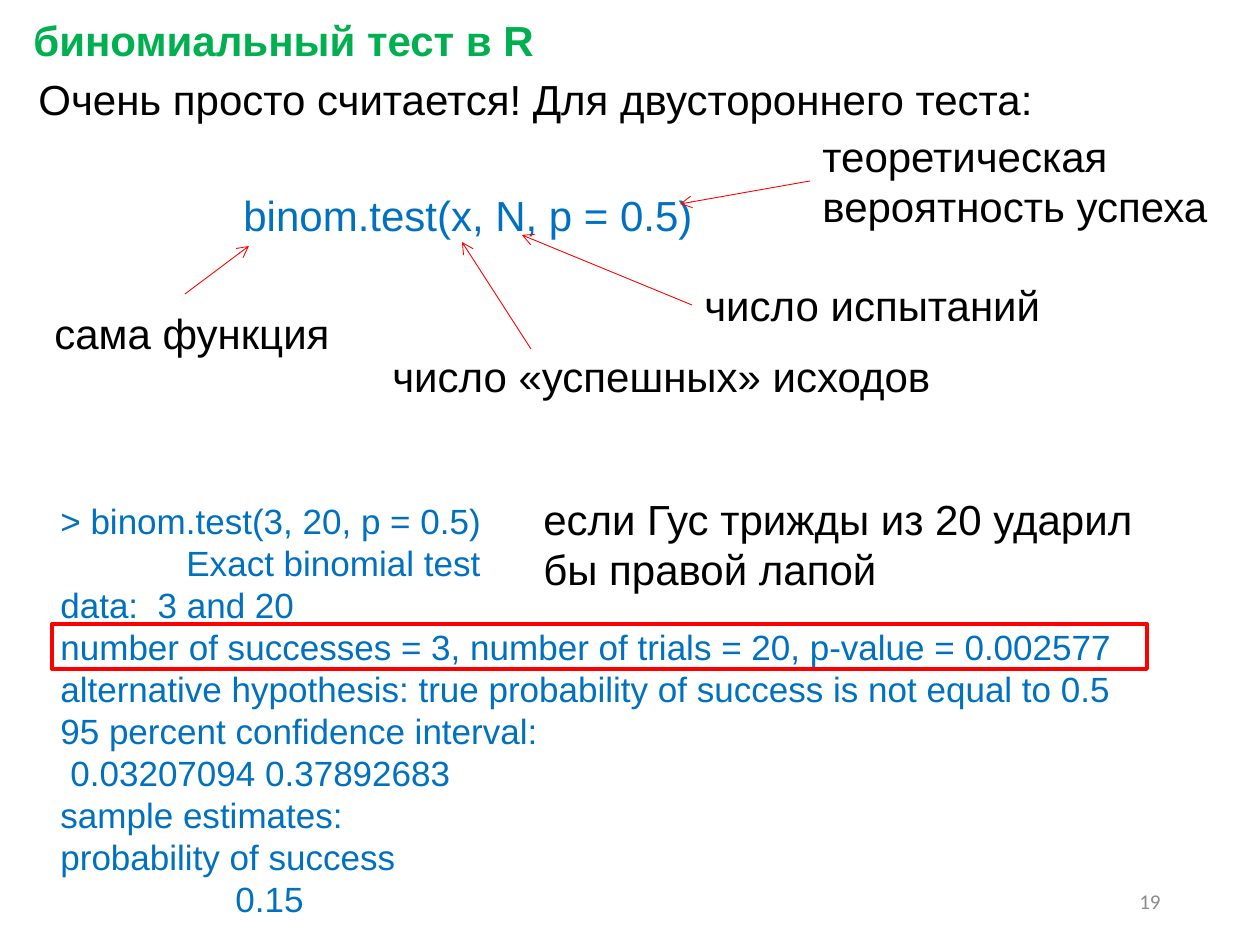
import pptx
import pptx.dml.color
import pptx.enum.shapes
import pptx.enum.text
import pptx.oxml.ns
import pptx.util
from lxml import etree

SCALE = 914400 / 126
BLACK, BLUE, RED, GREEN, GRAY = "000000", "0070C0", "FF0000", "00B050", "8C8C8C"
OUTPUT = [
    ("> binom.test(3, 20, p = 0.5)", 0),
    ("Exact binomial test", 126),
    ("data:  3 and 20", 0),
    ("number of successes = 3, number of trials = 20, p-value = 0.002577", 0),
    ("alternative hypothesis: true probability of success is not equal to 0.5", 0),
    ("95 percent confidence interval:", 0),
    ("0.03207094 0.37892683", 10),
    ("sample estimates:", 0),
    ("probability of success", 0),
    ("0.15", 175),
]
LABELS = [
    ("Очень просто считается! Для двустороннего теста:", (26, 67, 1030, 63), False),
    ("сама функция", (42, 301, 304, 63), False),
    ("число «успешных» исходов", (380, 344, 568, 63), False),
    ("число испытаний", (692, 273, 364, 63), False),
    ("теоретическая вероятность успеха", (810, 124, 450, 115), True),
    ("если Гус трижды из 20 ударил бы правой лапой", (531, 487, 640, 115), True),
]
ARROWS = [
    (185, 294, 249, 246),
    (531, 349, 462, 242),
    (692, 305, 522, 235),
    (810, 181, 680, 204),
]


def px(n):
    """Turn pixels into EMU."""
    return pptx.util.Emu(round(n * SCALE))


def rgb(color):
    """Turn a hex string into a colour."""
    return pptx.dml.color.RGBColor.from_string(color)


def add_text(s, lines, box, size=24, color=BLACK, font="Arial", bold=False,
             wrap=False, align="LEFT", anchor="TOP"):
    """Add a text box from a string or from (text, indent) pairs."""
    tf = s.shapes.add_textbox(*map(px, box)).text_frame
    tf.word_wrap = wrap
    tf.vertical_anchor = pptx.enum.text.MSO_ANCHOR[anchor]
    if isinstance(lines, str):
        lines = [(lines, 0)]
    for i, (text, indent) in enumerate(lines):
        p = tf.add_paragraph() if i else tf.paragraphs[0]
        p.alignment = pptx.enum.text.PP_ALIGN[align]
        if indent:
            p._p.get_or_add_pPr().set("marL", str(px(indent)))
        r = p.add_run()
        r.text = text
        r.font.name, r.font.size = font, pptx.util.Pt(size)
        r.font.bold, r.font.color.rgb = bold, rgb(color)


def add_arrow(s, ends):
    """Add a thin red line with an open head at its end."""
    line = s.shapes.add_connector(pptx.enum.shapes.MSO_CONNECTOR.STRAIGHT, *map(px, ends))
    line.line.color.rgb = rgb(RED)
    line.line.width = pptx.util.Pt(0.5)
    qn = pptx.oxml.ns.qn
    etree.SubElement(line.line._get_or_add_ln(), qn("a:tailEnd"), type="arrow")
    etree.SubElement(line._element.spPr, qn("a:effectLst"))


def add_frame(s, box):
    """Add an unfilled red rectangle."""
    sp = s.shapes.add_shape(pptx.enum.shapes.MSO_SHAPE.RECTANGLE, *map(px, box))
    sp.shadow.inherit = False
    sp.fill.background()
    sp.line.color.rgb = rgb(RED)
    sp.line.width = pptx.util.Pt(2.25)


def main():
    """Build the slide and save it."""
    prs = pptx.Presentation()
    prs.slide_width, prs.slide_height = px(1260), px(945)
    s = prs.slides.add_slide(prs.slide_layouts[6])
    add_text(s, "19", (890, 876, 283, 50), size=12, color=GRAY, font="Calibri",
             wrap=True, align="RIGHT", anchor="MIDDLE")
    add_text(s, "биномиальный тест в R", (21, 8, 530, 63), color=GREEN, bold=True)
    add_text(s, "binom.test(x, N, p = 0.5)", (231, 183, 495, 63), color=BLUE)
    for ends in ARROWS:
        add_arrow(s, ends)
    add_text(s, OUTPUT, (48, 493, 1120, 437), size=20, color=BLUE, wrap=True)
    add_frame(s, (52, 624, 1095, 45))
    for text, box, wrap in LABELS:
        add_text(s, text, box, wrap=wrap)
    prs.save("out.pptx")


if __name__ == "__main__":
    main()
